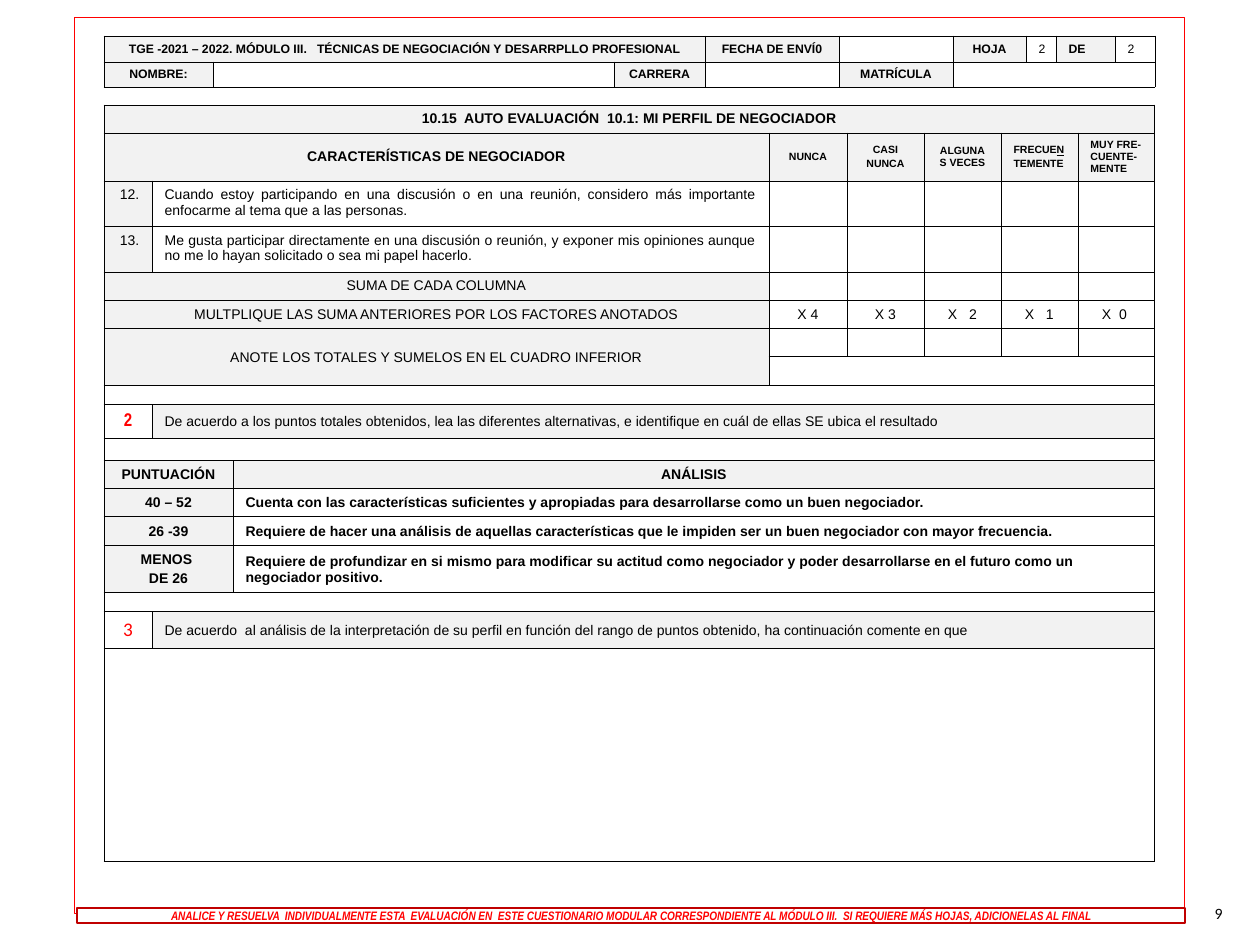
from lxml.etree import SubElement
from pptx import Presentation
from pptx.dml.color import RGBColor
from pptx.enum.shapes import MSO_SHAPE as Shape
from pptx.enum.text import MSO_ANCHOR as Anchor, PP_ALIGN as Align
from pptx.oxml.ns import qn
from pptx.util import Emu, Inches, Pt

PX = Inches(1) / 126
COLORS = {"ink": "000000", "label": "F2F2F2", "paper": "FFFFFF",
          "red": "FF0000", "dark_red": "C00000"}
ALIGN = {"l": Align.LEFT, "c": Align.CENTER, "r": Align.RIGHT, "j": Align.JUSTIFY}


def px(n):
    return Emu(round(n * PX))


def rgb(name):
    return RGBColor.from_string(COLORS[name])


def write(tf, text, size=8, font="Arial", color="ink", bold=False, italic=False, align="c"):
    """One paragraph per line of text; a part between underscores is underlined."""
    tf.word_wrap = True
    for i, line in enumerate(text.split("\n")):
        p = tf.add_paragraph() if i else tf.paragraphs[0]
        p.alignment = ALIGN[align]
        p.space_before = Pt(round(size * 0.2, 1))
        p.font.size, p.font.name = Pt(size), font
        p.font.bold, p.font.italic = bold, italic
        p.font.color.rgb = rgb(color)
        for j, part in enumerate(line.split("_")):
            if part:
                r = p.add_run()
                r.text = part
                if j % 2:
                    r.font.underline = True


def add_borders(cell):
    tc_pr = cell._tc.get_or_add_tcPr()
    for side in ("a:lnL", "a:lnR", "a:lnT", "a:lnB"):
        ln = SubElement(tc_pr, qn(side), w=str(Pt(0.5)))
        SubElement(SubElement(ln, qn("a:solidFill")), qn("a:srgbClr"), val=COLORS["ink"])


def add_grid(s, box, cols, rows, blank_fill):
    """Bordered table of blank cells with the given column and row sizes."""
    table = s.shapes.add_table(len(rows), len(cols), *map(px, box)).table
    table.first_row = table.horz_banding = False
    for col, w in zip(table.columns, cols):
        col.width = px(w)
    for row, h in zip(table.rows, rows):
        row.height = px(h)
    for cell in table.iter_cells():
        add_borders(cell)
        paint(cell, blank_fill)
        cell.margin_top = cell.margin_bottom = 0
        SubElement(cell.text_frame.paragraphs[0]._p, qn("a:endParaRPr"), sz="500")
    return table


def paint(cell, fill):
    if fill:
        cell.fill.solid()
        cell.fill.fore_color.rgb = rgb(fill)
    else:
        cell.fill.background()


def span(table, row, col, width, height=1):
    cell = table.cell(row, col)
    if width * height > 1:
        cell.merge(table.cell(row + height - 1, col + width - 1))
    return cell


def put(table, row, col, text, width=1, height=1, fill="label", top=False, **style):
    cell = span(table, row, col, width, height)
    paint(cell, fill)
    cell.vertical_anchor = Anchor.TOP if top else Anchor.MIDDLE
    cell.margin_left = cell.margin_right = Inches(0.1)
    cell.margin_top = cell.margin_bottom = px(6 if top else 4)
    write(cell.text_frame, text, **style)


def add_header(s, box):
    cols = [109, 401, 91, 134, 114, 73, 30, 59, 40]
    t = add_grid(s, box, cols, [26, 25], None)
    label = dict(size=7, bold=True)
    put(t, 0, 0, "TGE -2021 – 2022. MÓDULO III.   TÉCNICAS DE NEGOCIACIÓN Y DESARRPLLO PROFESIONAL",
        3, **label)
    for row, col, text in [(0, 3, "FECHA DE ENVÍ0"), (0, 5, "HOJA"), (1, 0, "NOMBRE:"),
                           (1, 2, "CARRERA"), (1, 4, "MATRÍCULA")]:
        put(t, row, col, text, **label)
    put(t, 0, 7, "DE", align="l", **label)
    for col in (6, 8):
        put(t, 0, col, "2", fill=None, size=7, align="l")
    span(t, 1, 5, 4)


def add_evaluation(s, box):
    cols = [48, 81, 536, 78] + [77] * 4
    rows = [28, 48, 45, 44, 28, 29, 28, 29, 19, 34, 22, 28, 28, 29, 47, 19, 37, 213]
    t = add_grid(s, box, cols, rows, "paper")
    for row in (8, 10, 15, 17):
        span(t, row, 0, 8)
    add_questions(t)
    add_totals(t)
    add_step(t, 9, "2", "De acuerdo a los puntos totales obtenidos, lea las diferentes "
             "alternativas, e identifique en cuál de ellas SE ubica el resultado",
             size=10.5, font="Arial Narrow", bold=True)
    add_analysis(t)
    add_step(t, 16, "3", "De acuerdo  al análisis de la interpretación de su perfil en función "
             "del rango de puntos obtenido, ha continuación comente en que",
             size=11, font="Calibri")


def add_questions(t):
    put(t, 0, 0, "10.15  AUTO EVALUACIÓN  10.1: MI PERFIL DE NEGOCIADOR", 8, bold=True)
    put(t, 1, 0, "CARACTERÍSTICAS DE NEGOCIADOR", 3, bold=True)
    scale = [("NUNCA", "c"), ("CASI\nNUNCA", "c"), ("ALGUNAS VECES", "c"),
             ("FRECUE_N_\nTEMENTE", "l"), ("MUY FRE-CUENTE-MENTE", "l")]
    for col, (text, align) in enumerate(scale, 3):
        put(t, 1, col, text, size=6, bold=True, align=align)
    questions = [
        ("12.", "Cuando estoy participando en una discusión o en una reunión, considero más "
                "importante enfocarme al tema que a las personas."),
        ("13.", "Me gusta participar directamente en una discusión o reunión, y exponer mis "
                "opiniones aunque no me lo hayan solicitado o sea mi papel hacerlo."),
    ]
    for row, (number, text) in enumerate(questions, 2):
        put(t, row, 0, number, top=True, align="r")
        put(t, row, 1, text, 2, fill="paper", top=True, align="j")


def add_totals(t):
    put(t, 4, 0, "SUMA DE CADA COLUMNA", 3)
    put(t, 5, 0, "MULTPLIQUE LAS SUMA ANTERIORES POR LOS FACTORES ANOTADOS", 3)
    for col, factor in enumerate(["X 4", "X 3", "X   2", "X   1", "X  0 "], 3):
        put(t, 5, col, factor, fill="paper")
    put(t, 6, 0, "ANOTE LOS TOTALES Y SUMELOS EN EL CUADRO INFERIOR", 3, 2)
    span(t, 7, 3, 5)


def add_step(t, row, number, text, **number_style):
    put(t, row, 0, number, fill="paper", color="red", **number_style)
    put(t, row, 1, text, 7, align="l")


def add_analysis(t):
    put(t, 11, 0, "PUNTUACIÓN", 2, bold=True)
    put(t, 11, 2, "ANÁLISIS", 6, bold=True)
    results = [
        ("40 – 52", "Cuenta con las características suficientes y apropiadas para "
                    "desarrollarse como un buen negociador."),
        ("26 -39", "Requiere de hacer una análisis de aquellas características que le "
                   "impiden ser un buen negociador con mayor frecuencia."),
        ("MENOS \nDE 26", "Requiere de profundizar en si mismo para modificar su actitud como "
                          "negociador y poder desarrollarse en el futuro como un negociador positivo."),
    ]
    for row, (points, text) in enumerate(results, 12):
        put(t, row, 0, points, 2, bold=True)
        put(t, row, 2, text, 6, fill="paper", bold=True, align="l")


def add_rect(s, box, line, width):
    sp = s.shapes.add_shape(Shape.RECTANGLE, *map(px, box))
    sp.shadow.inherit = False
    sp.fill.background()
    sp.line.color.rgb = rgb(line)
    sp.line.width = Pt(width)
    return sp


def add_notice(s, box):
    sp = add_rect(s, box, "dark_red", 1)
    sp.fill.solid()
    sp.fill.fore_color.rgb = rgb("paper")
    tf = sp.text_frame
    tf.margin_left = tf.margin_right = tf.margin_top = tf.margin_bottom = 0
    tf.vertical_anchor = Anchor.MIDDLE
    write(tf, "ANALICE Y RESUELVA  INDIVIDUALMENTE ESTA  EVALUACIÓN EN  ESTE CUESTIONARIO MODULAR "
          "CORRESPONDIENTE AL MÓDULO III.  SI REQUIERE MÁS HOJAS, ADICIONELAS AL FINAL",
          size=7, font="Arial Narrow", color="red", bold=True, italic=True)


def add_page_number(s, box):
    tf = s.shapes.add_textbox(*map(px, box)).text_frame
    tf.vertical_anchor = Anchor.MIDDLE
    write(tf, "9", size=9, font="Calibri", align="r")


def main():
    prs = Presentation()
    prs.slide_width, prs.slide_height = Inches(10), Inches(7.5)
    s = prs.slides.add_slide(prs.slide_layouts[6])
    add_page_number(s, (941, 888, 294, 50))
    add_evaluation(s, (104, 105, 1051, 755))
    add_header(s, (104, 36, 1051, 51))
    add_rect(s, (74, 17, 1111, 897), "red", 0.5)
    add_notice(s, (77, 908, 1108, 15))
    prs.save("out.pptx")


if __name__ == "__main__":
    main()
